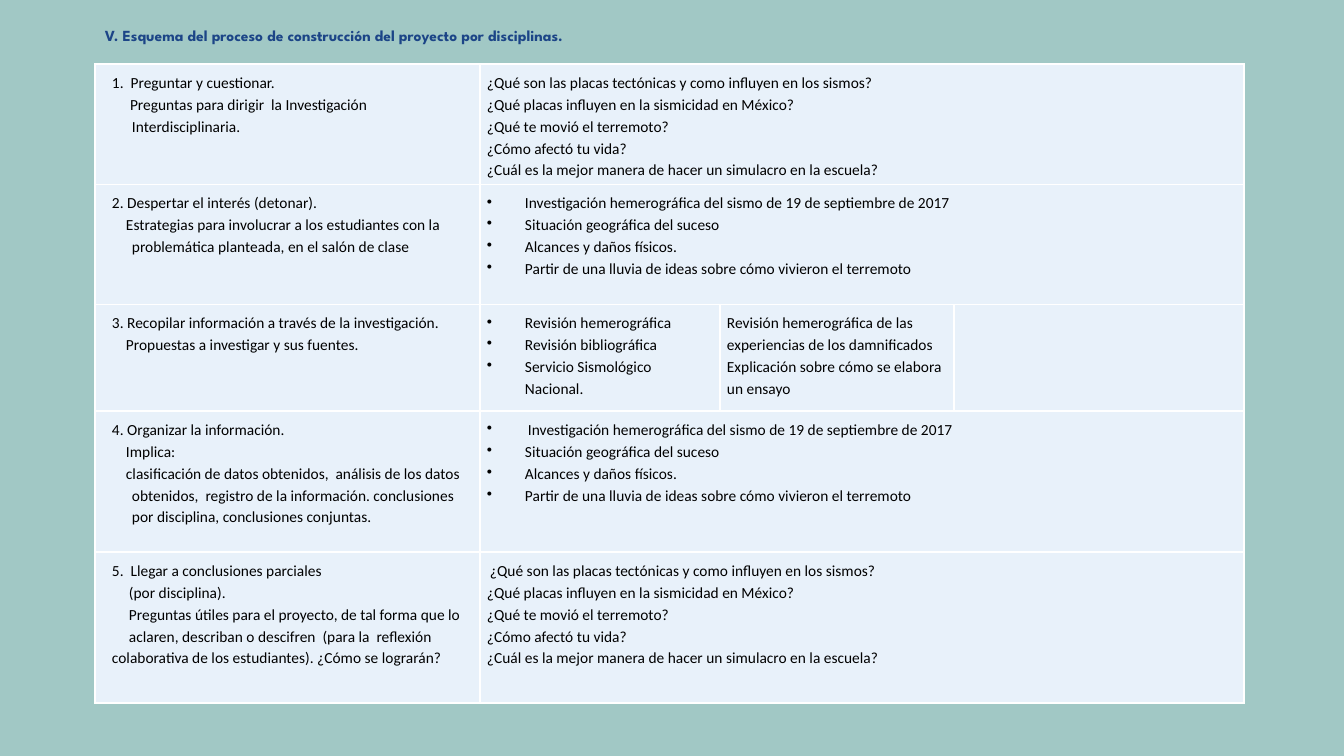
import pptx
import pptx.dml.color
import pptx.oxml.ns
import pptx.util
from lxml import etree

PX = 914400 / 100.8
COLORS = {"background": "A1C8C5", "title": "1C4587", "text": "000000",
          "cell": "E8F1FA", "border": "FFFFFF"}
FONT = "Calibri"
BULLET_INDENT = 38

QUESTIONS = [
    "¿Qué son las placas tectónicas y como influyen en los sismos?",
    "¿Qué placas influyen en la sismicidad en México?",
    "¿Qué te movió el terremoto?",
    "¿Cómo afectó tu vida?",
    "¿Cuál es la mejor manera de hacer un simulacro en la escuela?",
]
ACTIVITIES = [
    "Investigación hemerográfica del sismo de 19 de septiembre de 2017",
    "Situación geográfica del suceso",
    "Alcances y daños físicos.",
    "Partir de una lluvia de ideas sobre cómo vivieron el terremoto",
]
SOURCES = ["Revisión hemerográfica", "Revisión bibliográfica",
           "Servicio Sismológico Nacional."]
ESSAY = ["Revisión hemerográfica de las experiencias de los damnificados",
         "Explicación sobre cómo se elabora un ensayo"]

# Each step paragraph: text, left indent, first-line indent (px)
STEPS = [
    [("1.  Preguntar y cuestionar.", 30, -20),
     ("Preguntas para dirigir  la Investigación Interdisciplinaria.", 30, -2)],
    [("2. Despertar el interés (detonar).", 30, -20),
     ("Estrategias para involucrar a los estudiantes con la problemática "
      "planteada, en el salón de clase", 30, -6)],
    [("3. Recopilar información a través de la investigación.", 30, -20),
     ("Propuestas a investigar y sus fuentes.", 30, -6)],
    [("4. Organizar la información.", 30, -20),
     ("Implica:", 30, -6),
     ("clasificación de datos obtenidos,  análisis de los datos obtenidos,  "
      "registro de la información. conclusiones por disciplina, "
      "conclusiones conjuntas.", 30, -6)],
    [("5.  Llegar a conclusiones parciales", 10, 0),
     ("(por disciplina).", 10, 17),
     ("Preguntas útiles para el proyecto, de tal forma que lo", 10, 17),
     ("aclaren, describan o descifren  (para la  reflexión colaborativa de "
      "los estudiantes). ¿Cómo se lograrán?", 10, 17)],
]


def px(n):
    return pptx.util.Emu(round(n * PX))


def rgb(name):
    return pptx.dml.color.RGBColor.from_string(COLORS[name])


def add_run(p, text, font=FONT, color="text", bold=False):
    p.line_spacing = 1.15
    r = p.add_run()
    r.text = text
    r.font.name = font
    r.font.size = pptx.util.Pt(11)
    r.font.bold = bold
    r.font.color.rgb = rgb(color)


def indent(p, left, first, bullet=False):
    pPr = p._p.get_or_add_pPr()
    pPr.set("marL", str(px(left)))
    pPr.set("indent", str(px(first)))
    if bullet:
        bu = etree.SubElement(pPr, pptx.oxml.ns.qn("a:buChar"))
        bu.set("char", "•")


def plain(texts, first=0):
    return [(text, 0, 0 if i else first, False) for i, text in enumerate(texts)]


def bulleted(texts, extra=0):
    """Bulleted paragraphs; extra widens the gap after the first bullet."""
    lefts = [BULLET_INDENT + (0 if i else extra) for i in range(len(texts))]
    return [(text, left, -left, True) for text, left in zip(texts, lefts)]


def fill_cell(cell, paragraphs):
    tf = cell.text_frame
    for i, (text, left, first, *bullet) in enumerate(paragraphs):
        p = tf.add_paragraph() if i else tf.paragraphs[0]
        indent(p, left, first, any(bullet))
        add_run(p, text)


def style_cell(cell):
    cell.margin_left = cell.margin_right = px(7)
    cell.margin_top = cell.margin_bottom = px(7)
    tcPr = cell._tc.get_or_add_tcPr()
    for side in ("lnL", "lnR", "lnT", "lnB"):
        ln = etree.SubElement(tcPr, pptx.oxml.ns.qn("a:" + side))
        ln.set("w", str(pptx.util.Pt(1)))
        fill = etree.SubElement(ln, pptx.oxml.ns.qn("a:solidFill"))
        clr = etree.SubElement(fill, pptx.oxml.ns.qn("a:srgbClr"))
        clr.set("val", COLORS["border"])
    cell.fill.solid()
    cell.fill.fore_color.rgb = rgb("cell")


def add_table(slide, top, widths, heights, rows):
    """A row with fewer cells than columns merges its last cell to the right."""
    frame = slide.shapes.add_table(len(heights), len(widths), px(95), px(top),
                                   px(sum(widths)), px(sum(heights)))
    table = frame.table
    table.first_row = table.horz_banding = False
    for column, width in zip(table.columns, widths):
        column.width = px(width)
    for row, height in zip(table.rows, heights):
        row.height = px(height)
    for cell in table.iter_cells():
        style_cell(cell)
    for r, contents in enumerate(rows):
        for c, paragraphs in enumerate(contents):
            fill_cell(table.cell(r, c), paragraphs)
        if len(contents) < len(widths):
            last = table.cell(r, len(contents) - 1)
            last.merge(table.cell(r, len(widths) - 1))


def add_title(slide, text):
    sp = slide.shapes.add_textbox(px(95), px(18), px(914), px(30))
    tf = sp.text_frame
    tf.word_wrap = True
    add_run(tf.paragraphs[0], text, "League Spartan", "title", True)


def main():
    prs = pptx.Presentation()
    prs.slide_width, prs.slide_height = px(1344), px(756)
    slide = prs.slides.add_slide(prs.slide_layouts[6])
    slide.background.fill.solid()
    slide.background.fill.fore_color.rgb = rgb("background")

    add_title(slide, "V. Esquema del proceso de construcción del proyecto "
                     "por disciplinas.")
    add_table(slide, 64, [385, 240, 234, 290], [120, 120, 107], [
        [STEPS[0], plain(QUESTIONS)],
        [STEPS[1], bulleted(ACTIVITIES)],
        [STEPS[2], bulleted(SOURCES), plain(ESSAY), []],
    ])
    add_table(slide, 411, [385, 764], [141, 151], [
        [STEPS[3], bulleted(ACTIVITIES, extra=3)],
        [STEPS[4], plain(QUESTIONS, first=3)],
    ])
    prs.save("out.pptx")


if __name__ == "__main__":
    main()
